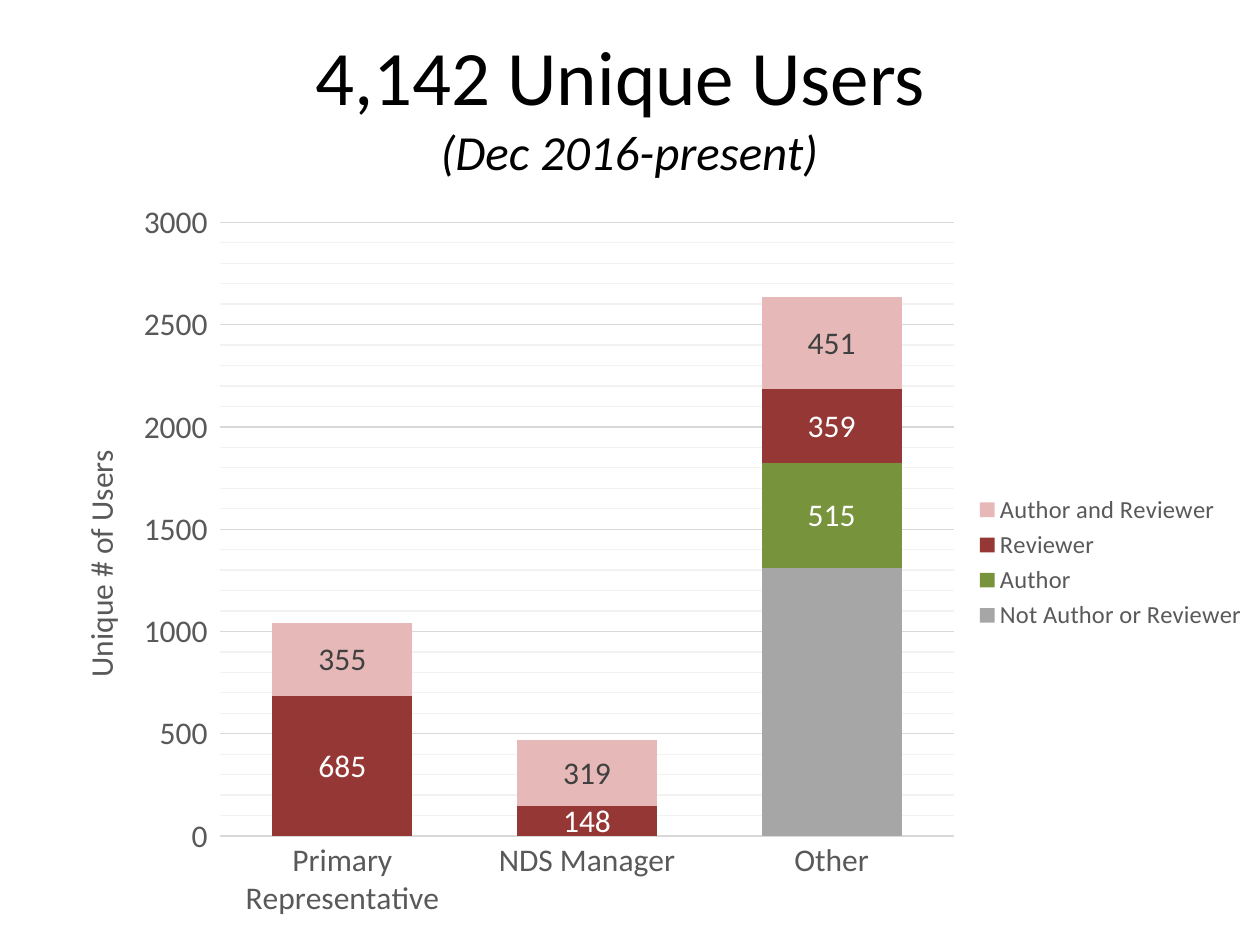
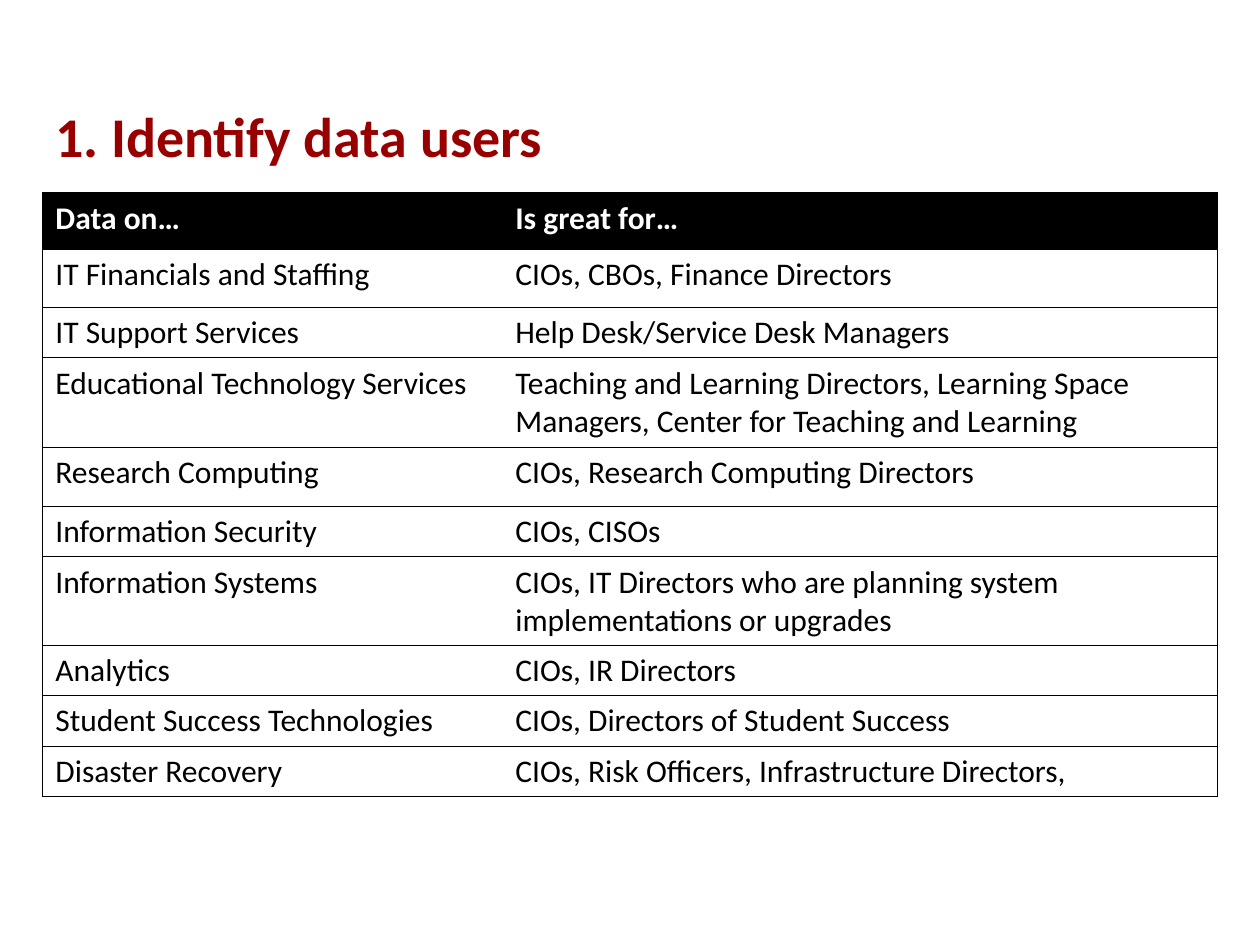
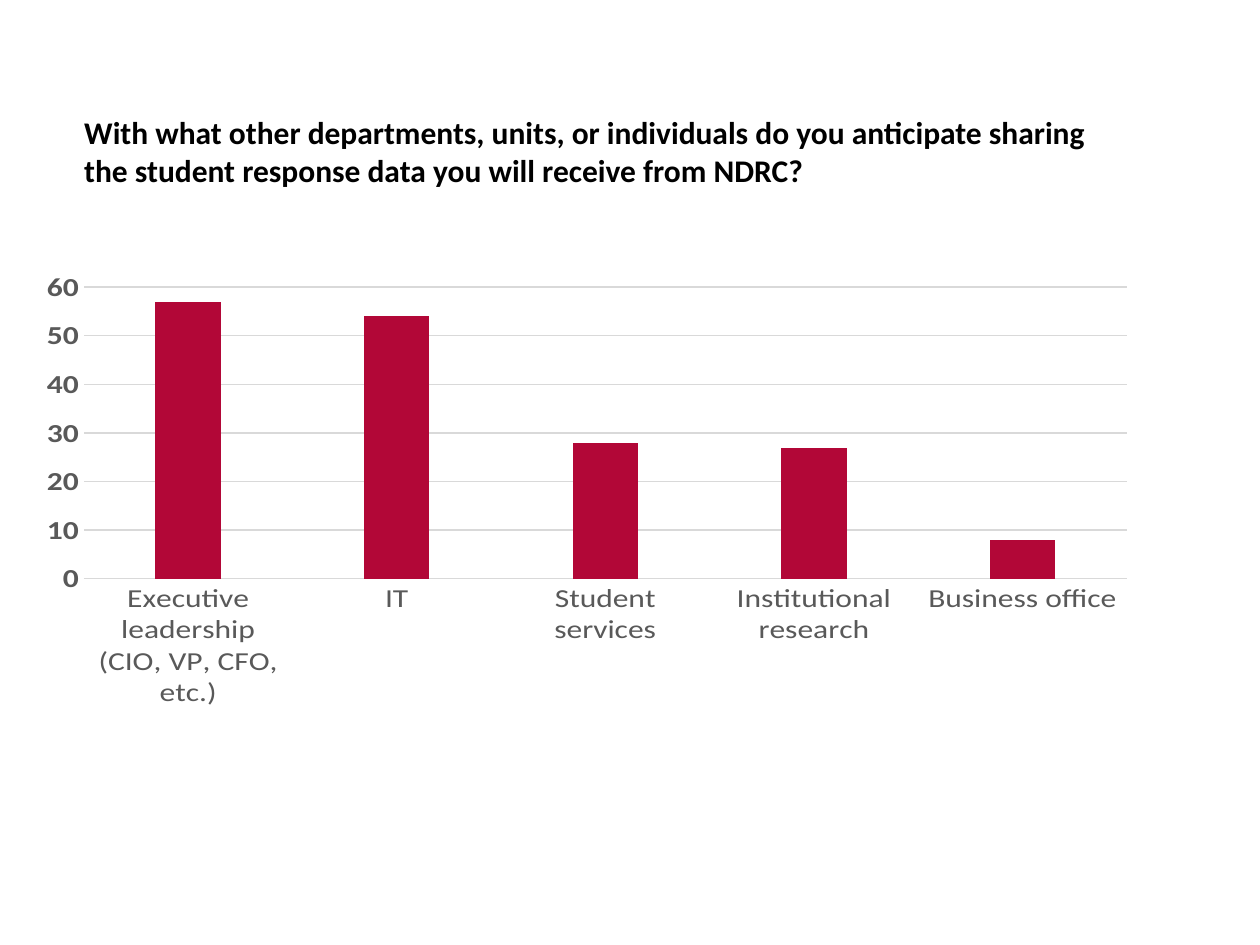
"""Build three slides on the users of survey data: two column charts and a table."""
from lxml.etree import SubElement
from pptx import Presentation
from pptx.chart.data import CategoryChartData
from pptx.dml.color import RGBColor
from pptx.enum.chart import XL_CHART_TYPE, XL_LEGEND_POSITION, XL_TICK_MARK
from pptx.enum.text import MSO_ANCHOR, PP_ALIGN
from pptx.oxml.ns import qn
from pptx.util import Inches, Pt

FONT = "Calibri"
BLACK = RGBColor(0, 0, 0)
WHITE = RGBColor(255, 255, 255)
DARK_RED = RGBColor(0x98, 0, 0)
CRIMSON = RGBColor(0xB2, 0x07, 0x37)
BRICK = RGBColor(0x95, 0x37, 0x35)
PINK = RGBColor(0xE6, 0xB9, 0xB8)
GREEN = RGBColor(0x77, 0x93, 0x3C)
GRAY = RGBColor(0xA6, 0xA6, 0xA6)
CHARCOAL = RGBColor(0x40, 0x40, 0x40)
LABEL_GRAY = RGBColor(0x59, 0x59, 0x59)
GRID_GRAY = RGBColor(0xD9, 0xD9, 0xD9)
PALE_GRAY = RGBColor(0xF2, 0xF2, 0xF2)

deck = Presentation()
deck.slide_width = Inches(10)
deck.slide_height = Inches(7.5)
COLUMN = deck.slide_width // 100
ROW = deck.slide_height // 75
users_page, table_page, sharing_page = [deck.slides.add_slide(deck.slide_layouts[6]) for _ in range(3)]


def add_text(page, area, text, size, color=BLACK, bold=False, anchor=MSO_ANCHOR.TOP, inset=0.05):
    """Add a text box at a grid area and return its paragraph."""
    left, top, width, height = area
    box = page.shapes.add_textbox(int(left * COLUMN), int(top * ROW), int(width * COLUMN), int(height * ROW))
    frame = box.text_frame
    frame.word_wrap = True
    frame.vertical_anchor = anchor
    frame.margin_top = frame.margin_bottom = Inches(inset)
    para = frame.paragraphs[0]
    para.font.name, para.font.size = FONT, Pt(size)
    para.font.color.rgb, para.font.bold = color, bold
    para.add_run().text = text
    return para


def place(element, **shares):
    """Give a chart part a manual layout in shares of the chart's size."""
    layout = element.find(qn("c:layout"))
    if layout is None:
        layout = SubElement(element, qn("c:layout"))
        element.insert(0, layout)
    manual = SubElement(layout, qn("c:manualLayout"))
    if "w" in shares:
        SubElement(manual, qn("c:layoutTarget")).set("val", "inner")
    for mode in ("xMode", "yMode"):
        SubElement(manual, qn("c:" + mode)).set("val", "edge")
    for name, share in shares.items():
        SubElement(manual, qn("c:" + name)).set("val", str(share))


user_series = [
    ("Not Author or Reviewer", (None, None, 1310), GRAY, None),
    ("Author", (None, None, 515), GREEN, WHITE),
    ("Reviewer", (685, 148, 359), BRICK, WHITE),
    ("Author and Reviewer", (355, 319, 451), PINK, CHARCOAL),
]
user_groups = ["Primary Representative", "NDS Manager", "Other"]
departments = ["Executive leadership (CIO, VP, CFO, etc.)", "IT", "Student services",
               "Institutional research", "Business office"]
sharing_series = [("Series 1", (57, 54, 28, 27, 8), CRIMSON, None)]
chart_plans = [
    (users_page, XL_CHART_TYPE.COLUMN_STACKED, (2.9, 15.3, 97.1, 58.7), user_groups, user_series,
     75, 100, 3000, 500, dict(x=0.15, y=0.04, w=0.6, h=0.83)),
    (sharing_page, XL_CHART_TYPE.COLUMN_CLUSTERED, (3.1, 18.1, 89, 38.1), departments, sharing_series,
     219, -27, 60, 10, dict(x=0.04, y=0.15, w=0.93, h=0.74)),
]
charts = []
for page, kind, area, categories, series_rows, gap, overlap, maximum, step, plot_shares in chart_plans:
    data = CategoryChartData()
    data.categories = categories
    for name, values, color, label_color in series_rows:
        data.add_series(name, values)
    left, top, width, height = area
    chart = page.shapes.add_chart(kind, int(left * COLUMN), int(top * ROW),
                                  int(width * COLUMN), int(height * ROW), data).chart
    charts.append(chart)
    chart.has_title = chart.has_legend = False
    chart.font.name, chart.font.size = FONT, Pt(18)
    plot = chart.plots[0]
    plot.gap_width, plot.overlap, plot.vary_by_categories = gap, overlap, False
    for series, (name, values, color, label_color) in zip(plot.series, series_rows):
        series.format.fill.solid()
        series.format.fill.fore_color.rgb = color
        if label_color is not None:
            labels = series.data_labels
            labels.show_value = True
            labels.font.name, labels.font.size = FONT, Pt(18)
            labels.font.color.rgb = label_color
    for axis in (chart.category_axis, chart.value_axis):
        axis.major_tick_mark = axis.minor_tick_mark = XL_TICK_MARK.NONE
        font = axis.tick_labels.font
        font.name, font.size, font.bold = FONT, Pt(18), False
        font.color.rgb = LABEL_GRAY
    value_axis = chart.value_axis
    value_axis.minimum_scale, value_axis.maximum_scale, value_axis.major_unit = 0, maximum, step
    value_axis.format.line.fill.background()
    for line in (chart.category_axis.format.line, value_axis.major_gridlines.format.line):
        line.color.rgb, line.width = GRID_GRAY, Pt(0.75)
    place(plot._element.getparent(), **plot_shares)

users_chart, sharing_chart = charts
sharing_chart.value_axis.tick_labels.font.bold = True
users_chart.has_legend = True
legend = users_chart.legend
legend.position, legend.include_in_layout = XL_LEGEND_POSITION.RIGHT, False
legend.font.name, legend.font.size = FONT, Pt(14)
legend.font.color.rgb = LABEL_GRAY
users_axis = users_chart.value_axis
users_axis.major_tick_mark = XL_TICK_MARK.OUTSIDE
users_axis.minor_unit = 100
users_axis.has_minor_gridlines = True
minor_gridlines = users_axis._element.find(qn("c:minorGridlines"))
minor_line = SubElement(SubElement(minor_gridlines, qn("c:spPr")), qn("a:ln"), w=str(Pt(0.75)))
SubElement(SubElement(minor_line, qn("a:solidFill")), qn("a:srgbClr"), val=str(PALE_GRAY))
para = users_axis.axis_title.text_frame.paragraphs[0]
para.text = "Unique # of Users"
para.font.name, para.font.size, para.font.bold = FONT, Pt(18), False
para.font.color.rgb = LABEL_GRAY
place(users_axis.axis_title._element.find(qn("c:layout")).getparent(), x=0.03, y=0.34)

title = add_text(users_page, (6.1, 1.3, 87.7, 8), "4,142 Unique Users ", 44, inset=0.1)
title.alignment = PP_ALIGN.CENTER
title.add_line_break()
span = title.add_run()
span.text = "(Dec 2016-present)"
span.font.size, span.font.italic = Pt(28), True

add_text(table_page, (3.4, 6.5, 93.2, 8.4), "1. Identify data users", 32, DARK_RED, True,
         MSO_ANCHOR.MIDDLE, 0.1)
audiences = [
    ("Data on…", "Is great for…", 4.5),
    ("IT Financials and Staffing", "CIOs, CBOs, Finance Directors", 4.6),
    ("IT Support Services", "Help Desk/Service Desk Managers", 3.9),
    ("Educational Technology Services",
     "Teaching and Learning Directors, Learning Space Managers, Center for Teaching and Learning", 7.1),
    ("Research Computing", "CIOs, Research Computing Directors", 4.7),
    ("Information Security", "CIOs, CISOs", 3.4),
    ("Information Systems", "CIOs, IT Directors who are planning system implementations or upgrades", 3.4),
    ("Analytics", "CIOs, IR Directors", 3.4),
    ("Student Success Technologies", "CIOs, Directors of Student Success", 3.4),
    ("Disaster Recovery", "CIOs, Risk Officers, Infrastructure Directors,", 3.4),
]
table = table_page.shapes.add_table(len(audiences), 2, int(3.4 * COLUMN), int(15.3 * ROW),
                                    int(93.2 * COLUMN), int(41.8 * ROW)).table
table.horz_banding = False
for table_column, width in zip(table.columns, (36.5, 56.7)):
    table_column.width = int(width * COLUMN)
for row_index, (topic, readers, height) in enumerate(audiences):
    table.rows[row_index].height = int(height * ROW)
    is_header = row_index == 0
    for column_index, text in enumerate((topic, readers)):
        cell = table.cell(row_index, column_index)
        cell.text = text
        font = cell.text_frame.paragraphs[0].font
        font.name, font.size, font.bold = FONT, Pt(18), is_header
        font.color.rgb = WHITE if is_header else BLACK
        properties = cell._tc.get_or_add_tcPr()
        inner_side = "lnR" if column_index == 0 else "lnL"
        for side in ("lnL", "lnR", "lnT", "lnB"):
            border = SubElement(properties, qn("a:" + side), w=str(Pt(0.75)))
            if side == inner_side:
                SubElement(border, qn("a:noFill"))
            else:
                SubElement(SubElement(border, qn("a:solidFill")), qn("a:srgbClr"), val=str(BLACK))
        if is_header:
            cell.fill.solid()
            cell.fill.fore_color.rgb = BLACK
        else:
            cell.fill.background()

add_text(sharing_page, (5.7, 8.5, 83.8, 7.1),
         "With what other departments, units, or individuals do you anticipate sharing "
         "the student response data you will receive from NDRC?", 18, bold=True)

deck.save("out.pptx")
